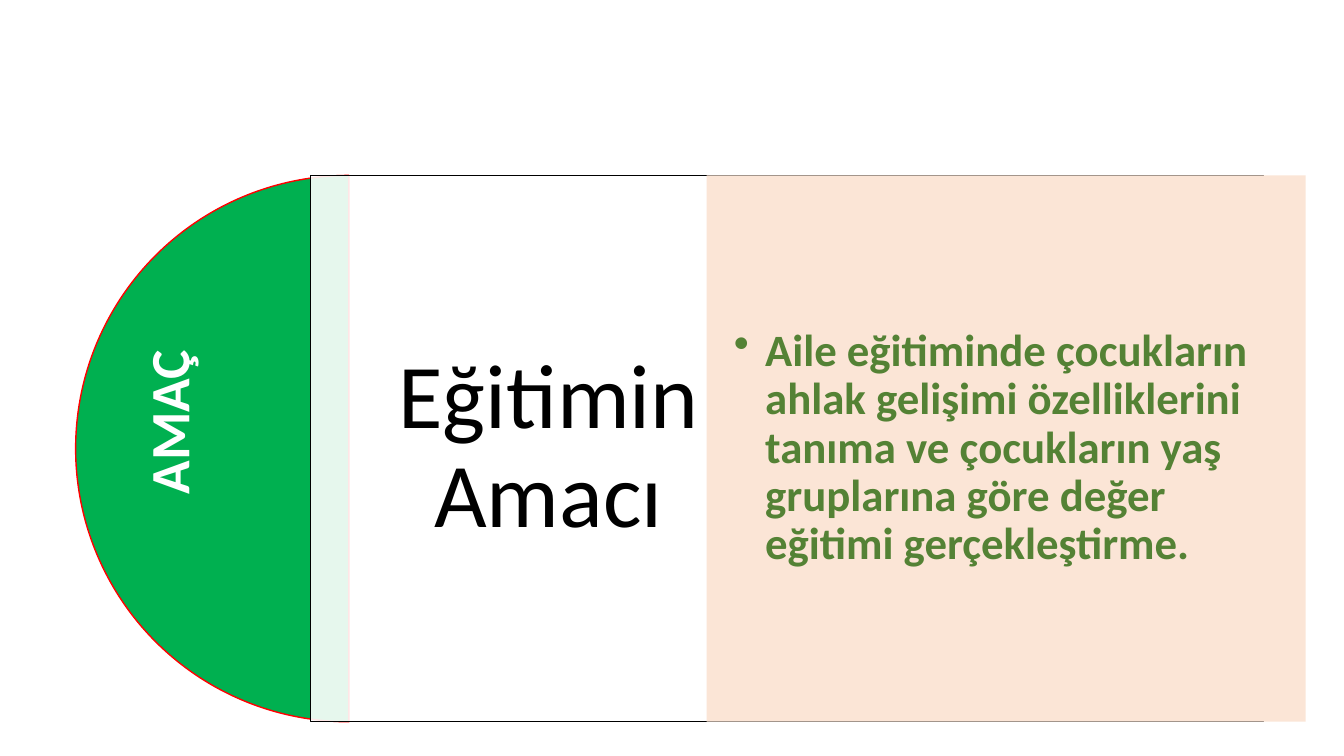
"""Builds the slide that states the aim of the training."""
from lxml import etree
from pptx import Presentation
from pptx.dml.color import RGBColor
from pptx.enum.shapes import MSO_SHAPE
from pptx.enum.text import MSO_ANCHOR, PP_ALIGN
from pptx.oxml.ns import qn
from pptx.util import Inches, Pt

PIE, RECT = MSO_SHAPE.PIE, MSO_SHAPE.RECTANGLE
LEFT, CENTER = PP_ALIGN.LEFT, PP_ALIGN.CENTER
MIDDLE = MSO_ANCHOR.MIDDLE
COLORS = {"green": "00B050", "red": "FF0000", "white": "FFFFFF",
          "black": "000000", "peach": "FBE5D6", "olive": "548235"}
FONT = "Calibri"
TOP, HEIGHT = 1.74, 5.42
PANEL_LEFT = 3.08


def rgb(name):
    """Return the named colour."""
    return RGBColor.from_string(COLORS[name])


def write(sp, text, size, color, bold=False, align=LEFT, inset=0.27, indent=0):
    """Put one formatted paragraph in a shape, bulleted when indented."""
    tf = sp.text_frame
    tf.word_wrap = True
    tf.vertical_anchor = MIDDLE
    tf.margin_left = tf.margin_right = Inches(inset)
    tf.margin_top = tf.margin_bottom = Inches(inset)
    p = tf.paragraphs[0]
    p.alignment = align
    p.line_spacing = 0.9
    if indent:
        pPr = p._p.get_or_add_pPr()
        pPr.set("marL", str(Inches(indent)))
        pPr.set("indent", str(-Inches(indent)))
        etree.SubElement(pPr, qn("a:buChar"), char="•")
    r = p.add_run()
    r.text = text
    r.font.name, r.font.size, r.font.bold = FONT, Pt(size), bold
    r.font.color.rgb = rgb(color)


class Deck:
    """Holds the presentation and its current slide."""

    def __init__(self):
        """Start a presentation with one blank slide."""
        self.prs = Presentation()
        self.prs.slide_width = Inches(13.33)
        self.prs.slide_height = Inches(7.5)
        self.s = self.prs.slides.add_slide(self.prs.slide_layouts[6])

    def shape(self, kind, box, fill, line=None, opacity=100):
        """Add a filled preset shape."""
        sp = self.s.shapes.add_shape(kind, *map(Inches, box))
        sp.shadow.inherit = False
        sp.fill.solid()
        sp.fill.fore_color.rgb = rgb(fill)
        if opacity < 100:
            clr = sp._element.spPr.find(qn("a:solidFill"))[0]
            etree.SubElement(clr, qn("a:alpha"), val=str(opacity * 1000))
        if line:
            sp.line.color.rgb = rgb(line)
            sp.line.width = Pt(1)
        else:
            sp.line.fill.background()
        return sp

    def text(self, box, text, size, color, rotation=0, **fmt):
        """Add a text box."""
        sp = self.s.shapes.add_textbox(*map(Inches, box))
        sp.rotation = rotation
        write(sp, text, size, color, **fmt)
        return sp


def main():
    """Build and save the slide."""
    deck = Deck()
    pie = deck.shape(PIE, (0.75, TOP, HEIGHT, HEIGHT), "green", "red")
    pie.adjustments[0], pie.adjustments[1] = 54, 162
    deck.shape(RECT, (PANEL_LEFT, TOP, 9.45, HEIGHT), "white", "black", 90)
    deck.text((PANEL_LEFT, TOP, 4.72, HEIGHT), "Eğitimin Amacı", 65, "black",
              align=CENTER)
    aim = deck.shape(RECT, (7.01, TOP, 5.94, HEIGHT), "peach")
    write(aim, "Aile eğitiminde çocukların ahlak gelişimi özelliklerini tanıma "
          "ve çocukların yaş gruplarına göre değer eğitimi gerçekleştirme.",
          32, "olive", bold=True, indent=0.31)
    deck.text((0.6, 3.63, 2.2, 0.54), "AMAÇ", 39.6, "white", rotation=270,
              bold=True, inset=0.1)
    deck.prs.save("out.pptx")


if __name__ == "__main__":
    main()
